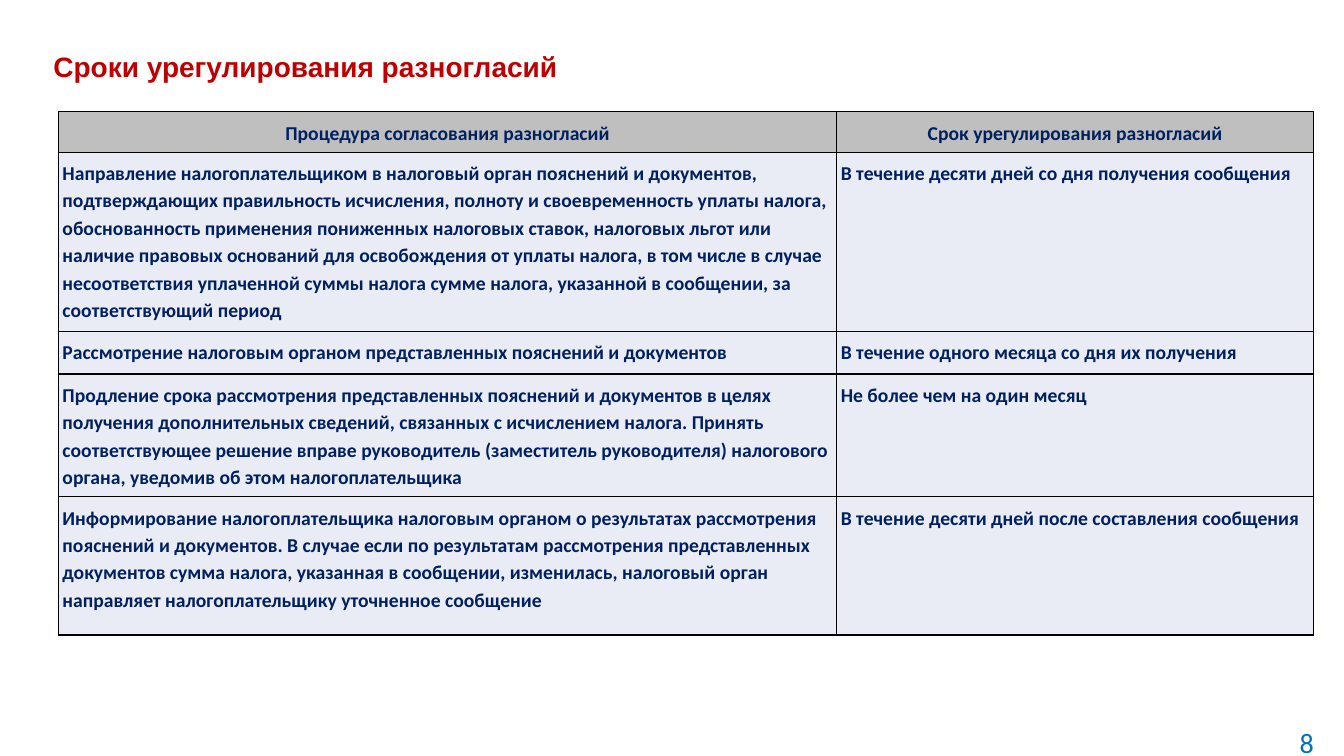
import pptx
import pptx.dml.color
import pptx.enum.text
import pptx.oxml
import pptx.oxml.ns
import pptx.util
from pptx.util import Inches

COLORS = {
    "title": "C00000",
    "table_text": "002060",
    "header_fill": "BFBFBF",
    "body_fill": "E9EBF5",
    "border": "000000",
    "page_number": "0070C0",
}
ALIGN = pptx.enum.text.PP_ALIGN
ANCHOR = pptx.enum.text.MSO_ANCHOR

COLUMN_WIDTHS = [7.72, 4.73]
ROW_HEIGHTS = [0.4, 1.78, 0.42, 1.22, 1.37]
DEADLINES = [
    ("Процедура согласования разногласий", "Срок урегулирования разногласий"),
    ("Направление налогоплательщиком в налоговый орган пояснений и документов, "
     "подтверждающих правильность исчисления, полноту и своевременность уплаты налога, "
     "обоснованность применения пониженных налоговых ставок, налоговых льгот или "
     "наличие правовых оснований для освобождения от уплаты налога, в том числе в случае "
     "несоответствия уплаченной суммы налога сумме налога, указанной в сообщении, за "
     "соответствующий период",
     "В течение десяти дней со дня получения сообщения"),
    ("Рассмотрение налоговым органом представленных пояснений и документов",
     "В течение одного месяца со дня их получения"),
    ("Продление срока рассмотрения представленных пояснений и документов в целях "
     "получения дополнительных сведений, связанных с исчислением налога. Принять "
     "соответствующее решение вправе руководитель (заместитель руководителя) налогового "
     "органа, уведомив об этом налогоплательщика",
     "Не более чем на один месяц"),
    ("Информирование налогоплательщика налоговым органом о результатах рассмотрения "
     "пояснений и документов. В случае если по результатам рассмотрения представленных "
     "документов сумма налога, указанная в сообщении, изменилась, налоговый орган "
     "направляет налогоплательщику уточненное сообщение",
     "В течение десяти дней после составления сообщения"),
]


def rgb(name):
    return pptx.dml.color.RGBColor.from_string(COLORS[name])


def write_text(frame, text, *, color, size, font="Calibri", bold=False,
               align=ALIGN.LEFT, spacing=1.0):
    para = frame.paragraphs[0]
    para.alignment = align
    para.line_spacing = spacing
    span = para.add_run()
    span.text = text
    span.font.name = font
    span.font.size = pptx.util.Pt(size)
    span.font.bold = bold
    span.font.color.rgb = rgb(color)


class SlideBuilder:
    def __init__(self, deck):
        self.page = deck.slides.add_slide(deck.slide_layouts[6])

    def text(self, text, left, top, width, height, **style):
        box = self.page.shapes.add_textbox(
            Inches(left), Inches(top), Inches(width), Inches(height))
        frame = box.text_frame
        frame.word_wrap = True
        frame.vertical_anchor = ANCHOR.MIDDLE
        write_text(frame, text, **style)

    def table(self, rows, left, top, widths, heights):
        table = self.page.shapes.add_table(
            len(rows), len(widths), Inches(left), Inches(top),
            Inches(sum(widths)), Inches(sum(heights))).table
        for column, width in zip(table.columns, widths):
            column.width = Inches(width)
        for row, height in zip(table.rows, heights):
            row.height = Inches(height)
        for row_index, texts in enumerate(rows):
            for column_index, text in enumerate(texts):
                self.cell(table.cell(row_index, column_index), text, row_index == 0)

    def cell(self, cell, text, is_header):
        cell.margin_left = cell.margin_right = Inches(0.04)
        cell.margin_top = cell.margin_bottom = Inches(0.06)
        cell.vertical_anchor = ANCHOR.TOP
        write_text(cell.text_frame, text, color="table_text", size=14, bold=True,
                   align=ALIGN.CENTER if is_header else ALIGN.LEFT, spacing=1.15)
        # Borders come before the fill in the cell properties
        properties = cell._tc.get_or_add_tcPr()
        for side in ("lnL", "lnR", "lnT", "lnB"):
            properties.append(pptx.oxml.parse_xml(
                f'<a:{side} {pptx.oxml.ns.nsdecls("a")} w="12700"><a:solidFill>'
                f'<a:srgbClr val="{COLORS["border"]}"/></a:solidFill></a:{side}>'))
        cell.fill.solid()
        cell.fill.fore_color.rgb = rgb("header_fill" if is_header else "body_fill")


def main():
    deck = pptx.Presentation()
    deck.slide_width = Inches(13.33)
    deck.slide_height = Inches(7.5)
    builder = SlideBuilder(deck)

    # Title
    builder.text("Сроки урегулирования разногласий", 0.43, 0.29, 12.45, 0.77,
                 color="title", size=20, font="Arial", bold=True, spacing=0.9)

    # Deadlines table
    builder.table(DEADLINES, 0.58, 1.11, COLUMN_WIDTHS, ROW_HEIGHTS)

    # Page number
    builder.text("8", 12.26, 7.1, 0.87, 0.53,
                 color="page_number", size=20, align=ALIGN.RIGHT)

    deck.save("out.pptx")


if __name__ == "__main__":
    main()
